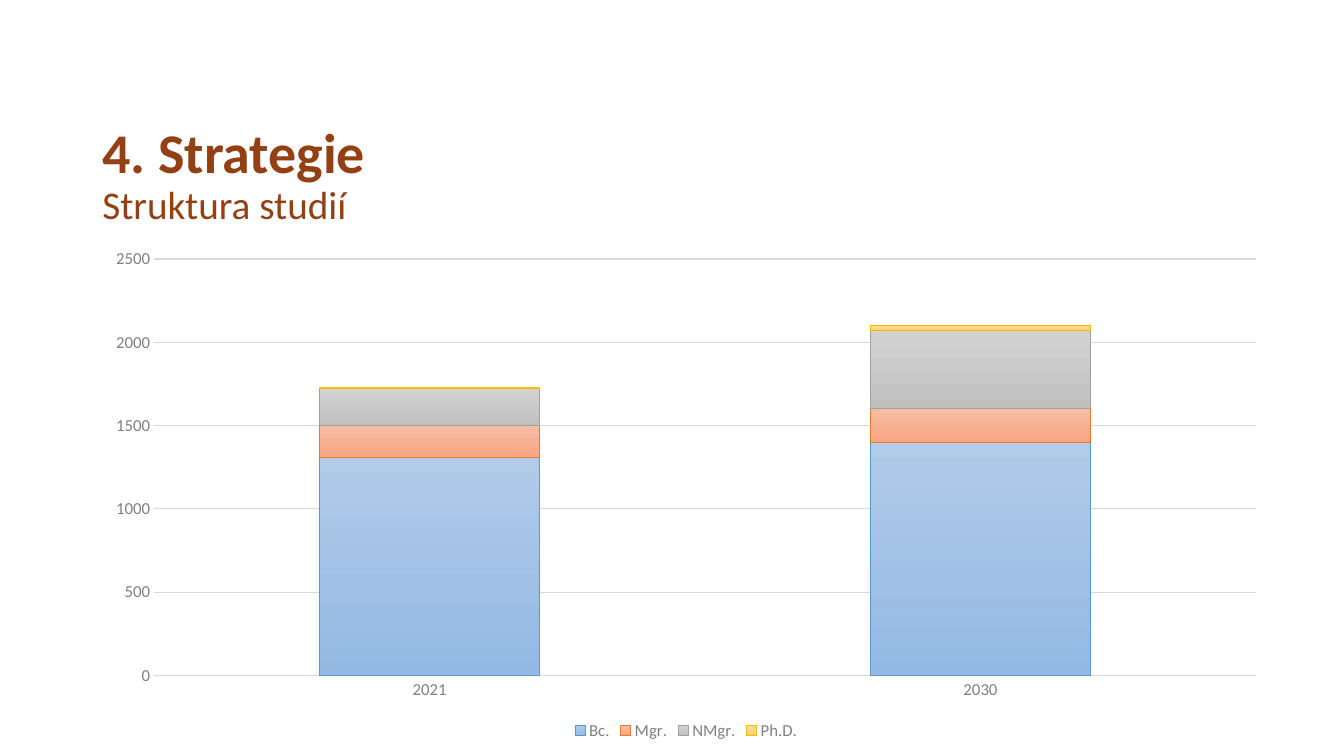
import pptx
import pptx.chart.data
import pptx.dml.color
import pptx.enum.chart
import pptx.enum.text
import pptx.util
from pptx.util import Cm

RGBColor = pptx.dml.color.RGBColor
FONT = "Calibri"
BROWN = RGBColor(0x93, 0x41, 0x14)
LABEL_GREY = RGBColor(0x80, 0x80, 0x80)
GRID_GREY = RGBColor(0xD9, 0xD9, 0xD9)
BLUE_TOP, BLUE_BOTTOM, BLUE_EDGE = map(RGBColor.from_string, ("B1CBE9", "93B9E4", "5998D0"))
ORANGE_TOP, ORANGE_BOTTOM, ORANGE_EDGE = map(RGBColor.from_string, ("F7BDA5", "F8A582", "E87A30"))
SILVER_TOP, SILVER_BOTTOM, SILVER_EDGE = map(RGBColor.from_string, ("D2D2D2", "C0C0C0", "A1A1A1"))
GOLD_TOP, GOLD_BOTTOM, GOLD_EDGE = map(RGBColor.from_string, ("FFDB9E", "FFD07C", "F9BC00"))

YEARS = ("2021", "2030")
STUDIES = (
    ("Bc.", (1310, 1400), BLUE_TOP, BLUE_BOTTOM, BLUE_EDGE),
    ("Mgr.", (190, 200), ORANGE_TOP, ORANGE_BOTTOM, ORANGE_EDGE),
    ("NMgr.", (220, 470), SILVER_TOP, SILVER_BOTTOM, SILVER_EDGE),
    ("Ph.D.", (10, 30), GOLD_TOP, GOLD_BOTTOM, GOLD_EDGE),
)


def style_line(line, color):
    """Draw a thin line in the given colour."""
    line.color.rgb = color
    line.width = pptx.util.Pt(0.75)


def add_heading(slide, left, top, width, height):
    """Place the section heading and its subtitle in the box."""
    heading = slide.shapes.add_textbox(left, top, width, height).text_frame
    heading.word_wrap = True
    heading.vertical_anchor = pptx.enum.text.MSO_ANCHOR.MIDDLE
    paragraph = heading.paragraphs[0]
    paragraph.line_spacing = 0.9
    paragraph.font.name = FONT
    paragraph.font.color.rgb = BROWN
    section = paragraph.add_run()
    section.text = "4. Strategie"
    section.font.size = pptx.util.Pt(40)
    section.font.bold = True
    paragraph.add_line_break()
    subtitle = paragraph.add_run()
    subtitle.text = "Struktura studií"
    subtitle.font.size = pptx.util.Pt(28)


def add_study_chart(slide, left, top, width, height):
    """Place the stacked columns of students by type of study in the box."""
    study_data = pptx.chart.data.CategoryChartData()
    study_data.categories = YEARS
    for name, counts, *_ in STUDIES:
        study_data.add_series(name, counts)
    chart = slide.shapes.add_chart(
        pptx.enum.chart.XL_CHART_TYPE.COLUMN_STACKED, left, top, width, height, study_data
    ).chart
    chart.font.name = FONT
    chart.font.size = pptx.util.Pt(12)
    chart.font.color.rgb = LABEL_GREY
    chart.has_title = False
    chart.has_legend = True
    chart.legend.position = pptx.enum.chart.XL_LEGEND_POSITION.BOTTOM
    chart.legend.include_in_layout = False

    for axis in (chart.category_axis, chart.value_axis):
        axis.major_tick_mark = pptx.enum.chart.XL_TICK_MARK.NONE
        axis.minor_tick_mark = pptx.enum.chart.XL_TICK_MARK.NONE
    style_line(chart.category_axis.format.line, GRID_GREY)
    counts_axis = chart.value_axis
    counts_axis.minimum_scale, counts_axis.maximum_scale = 0, 2500
    counts_axis.major_unit = 500
    counts_axis.format.line.fill.background()
    style_line(counts_axis.major_gridlines.format.line, GRID_GREY)

    columns = chart.plots[0]
    columns.gap_width = 150
    columns.overlap = 100
    columns.vary_by_categories = False
    for series, (_, _, top_color, bottom_color, edge) in zip(columns.series, STUDIES):
        fill = series.format.fill
        fill.gradient()
        fill.gradient_angle = 270
        for stop, color in zip(fill.gradient_stops, (top_color, bottom_color)):
            stop.color.rgb = color
        style_line(series.format.line, edge)


def main():
    """Build the slide and save it."""
    presentation = pptx.Presentation()
    presentation.slide_width = Cm(33.87)
    presentation.slide_height = Cm(19.05)
    slide = presentation.slides.add_slide(presentation.slide_layouts[6])
    add_heading(slide, Cm(2.33), Cm(2.77), Cm(29.21), Cm(3.35))
    add_study_chart(slide, Cm(2.33), Cm(6.02), Cm(29.92), Cm(12.75))
    presentation.save("out.pptx")


if __name__ == "__main__":
    main()
